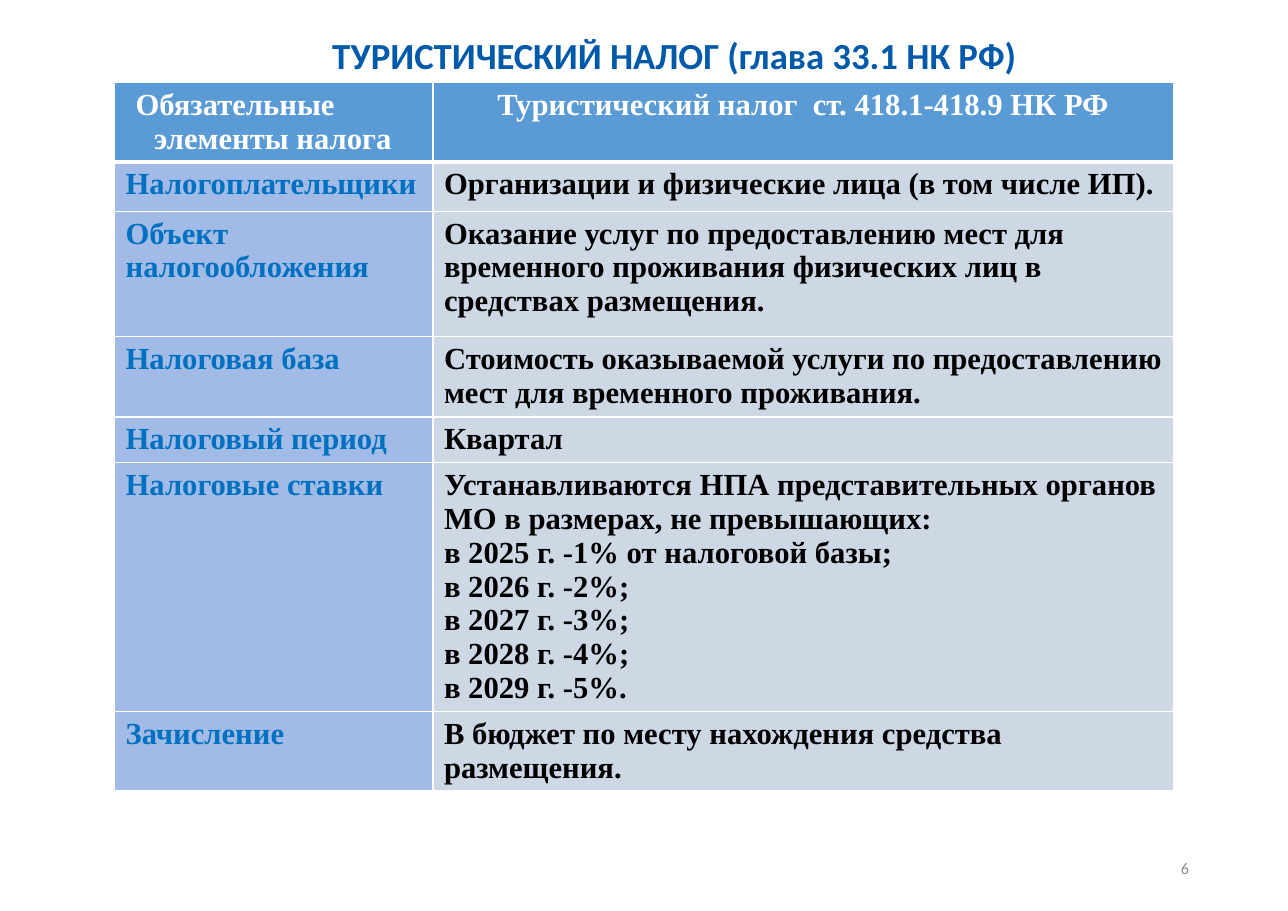
from pptx import Presentation
from pptx.dml.color import RGBColor
from pptx.enum.text import MSO_ANCHOR, MSO_AUTO_SIZE, PP_ALIGN
from pptx.oxml.ns import qn
from pptx.util import Inches, Pt
from lxml.etree import SubElement, Element

WHITE = RGBColor(0xFF, 0xFF, 0xFF)
BLACK = RGBColor(0, 0, 0)
GRAY = RGBColor(0x8B, 0x8B, 0x8B)
TITLE_BLUE = RGBColor(0x00, 0x5A, 0xA9)
LABEL_BLUE = RGBColor(0x00, 0x70, 0xC0)
HEADER_FILL = RGBColor(0x5B, 0x9B, 0xD5)
LABEL_FILL = RGBColor(0xA2, 0xBB, 0xE6)
VALUE_FILL = RGBColor(0xCE, 0xD8, 0xE5)

COL_WIDTHS = [2.89, 6.72]
ROW_HEIGHTS = [0.71, 0.45, 1.14, 0.73, 0.41, 2.26, 0.72]
ROWS = [
    ("Обязательные элементы налога",
     "Туристический налог  ст. 418.1-418.9 НК РФ"),
    ("Налогоплательщики",
     "Организации и физические лица (в том числе ИП)."),
    ("Объект налогообложения",
     "Оказание услуг по предоставлению мест для временного проживания "
     "физических лиц в средствах размещения."),
    ("Налоговая база",
     "Стоимость оказываемой услуги по предоставлению мест для временного "
     "проживания."),
    ("Налоговый период", "Квартал"),
    ("Налоговые ставки",
     "Устанавливаются НПА представительных органов МО в размерах, "
     "не превышающих:\n"
     "в 2025 г. -1% от налоговой базы;\n"
     "в 2026 г. -2%;\n"
     "в 2027 г. -3%;\n"
     "в 2028 г. -4%;\n"
     "в 2029 г. -5%."),
    ("Зачисление",
     "В бюджет по месту нахождения средства размещения."),
]


def format_text(tf, font, size, color, bold=False, align=PP_ALIGN.LEFT):
    for p in tf.paragraphs:
        p.alignment = align
        for r in p.runs:
            r.font.name = font
            r.font.size = Pt(size)
            r.font.bold = bold
            r.font.color.rgb = color


def set_indent(p, left, first=0):
    pPr = p._p.get_or_add_pPr()
    pPr.set("marL", str(Inches(left)))
    pPr.set("indent", str(Inches(first)))


def set_borders(cell, top, bottom):
    tcPr = cell._tc.get_or_add_tcPr()
    widths = {"a:lnL": 0.96, "a:lnR": 0.96, "a:lnT": top, "a:lnB": bottom}
    for i, (tag, width) in enumerate(widths.items()):
        ln = Element(qn(tag), w=str(Pt(width)))
        fill = SubElement(ln, qn("a:solidFill"))
        SubElement(fill, qn("a:srgbClr"), val=str(WHITE))
        tcPr.insert(i, ln)


def add_title(slide, text):
    sp = slide.shapes.title
    sp.left, sp.top = Inches(0.57), Inches(0.28)
    sp.width, sp.height = Inches(10.79), Inches(7.8)
    tf = sp.text_frame
    tf.text = text
    tf.word_wrap = True
    tf.auto_size = MSO_AUTO_SIZE.NONE
    tf.vertical_anchor = MSO_ANCHOR.TOP
    tf.margin_left = tf.margin_right = Inches(0.11)
    tf.margin_top = tf.margin_bottom = Inches(0.06)
    p = tf.paragraphs[0]
    set_indent(p, 0.31)
    p.line_spacing = 0.9
    format_text(tf, "Calibri", 24, TITLE_BLUE, True, PP_ALIGN.CENTER)


def add_tax_table(slide):
    table = slide.shapes.add_table(
        len(ROWS), len(COL_WIDTHS), Inches(1.04), Inches(0.75),
        Inches(sum(COL_WIDTHS)), Inches(sum(ROW_HEIGHTS))).table
    table.horz_banding = False
    for col, width in zip(table.columns, COL_WIDTHS):
        col.width = Inches(width)
    for i, texts in enumerate(ROWS):
        table.rows[i].height = Inches(ROW_HEIGHTS[i])
        for j, text in enumerate(texts):
            cell = table.cell(i, j)
            if i == 0:
                fill, color = HEADER_FILL, WHITE
            else:
                fill, color = [(LABEL_FILL, LABEL_BLUE), (VALUE_FILL, BLACK)][j]
            cell.text_frame.text = text
            format_text(cell.text_frame, "Times New Roman", 20, color, True)
            cell.fill.solid()
            cell.fill.fore_color.rgb = fill
            set_borders(cell, 3 if i == 1 else 0.96, 3 if i == 0 else 0.96)
    set_indent(table.cell(0, 0).text_frame.paragraphs[0], 0.26, -0.17)
    table.cell(0, 1).text_frame.paragraphs[0].alignment = PP_ALIGN.CENTER


def add_page_number(slide, number):
    sp = slide.shapes.add_textbox(
        Inches(8.26), Inches(7.66), Inches(2.63), Inches(0.44))
    tf = sp.text_frame
    tf.text = number
    tf.word_wrap = True
    tf.vertical_anchor = MSO_ANCHOR.MIDDLE
    format_text(tf, "Calibri", 10.5, GRAY, align=PP_ALIGN.RIGHT)


def main():
    prs = Presentation()
    prs.slide_width, prs.slide_height = Inches(11.69), Inches(8.27)
    slide = prs.slides.add_slide(prs.slide_layouts[5])
    add_title(slide, "ТУРИСТИЧЕСКИЙ НАЛОГ (глава 33.1 НК РФ)")
    add_tax_table(slide)
    add_page_number(slide, "6")
    prs.save("out.pptx")


if __name__ == "__main__":
    main()
